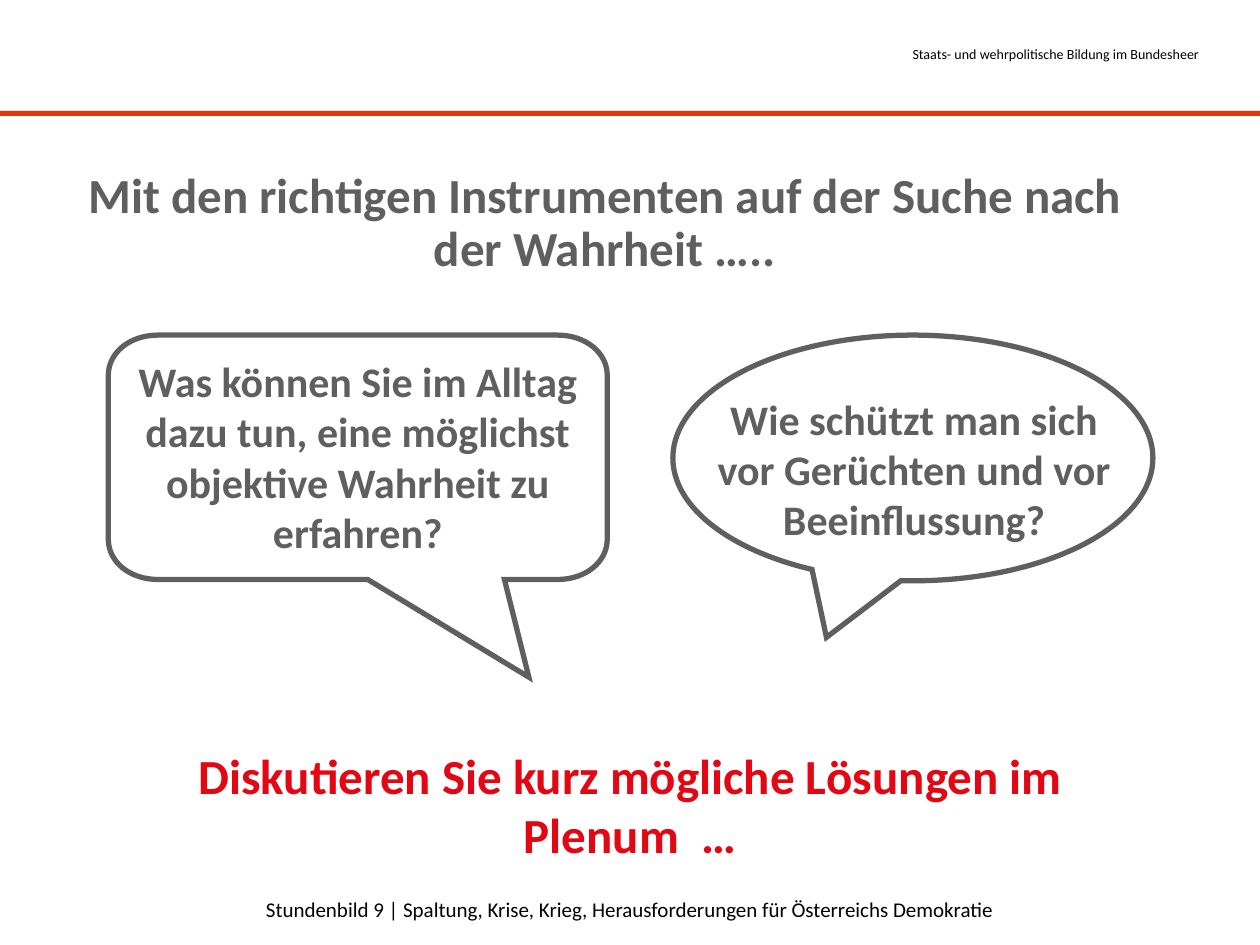
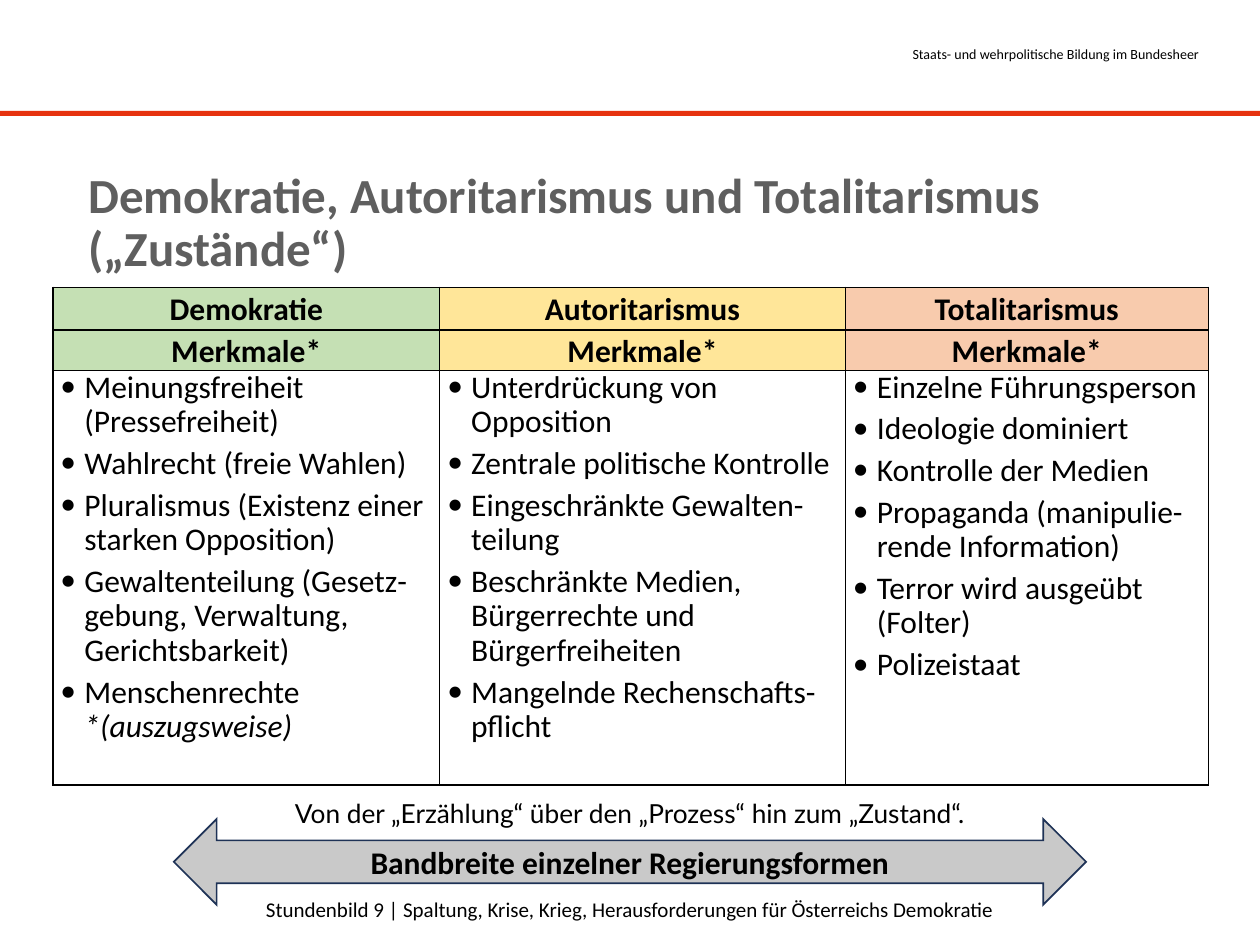
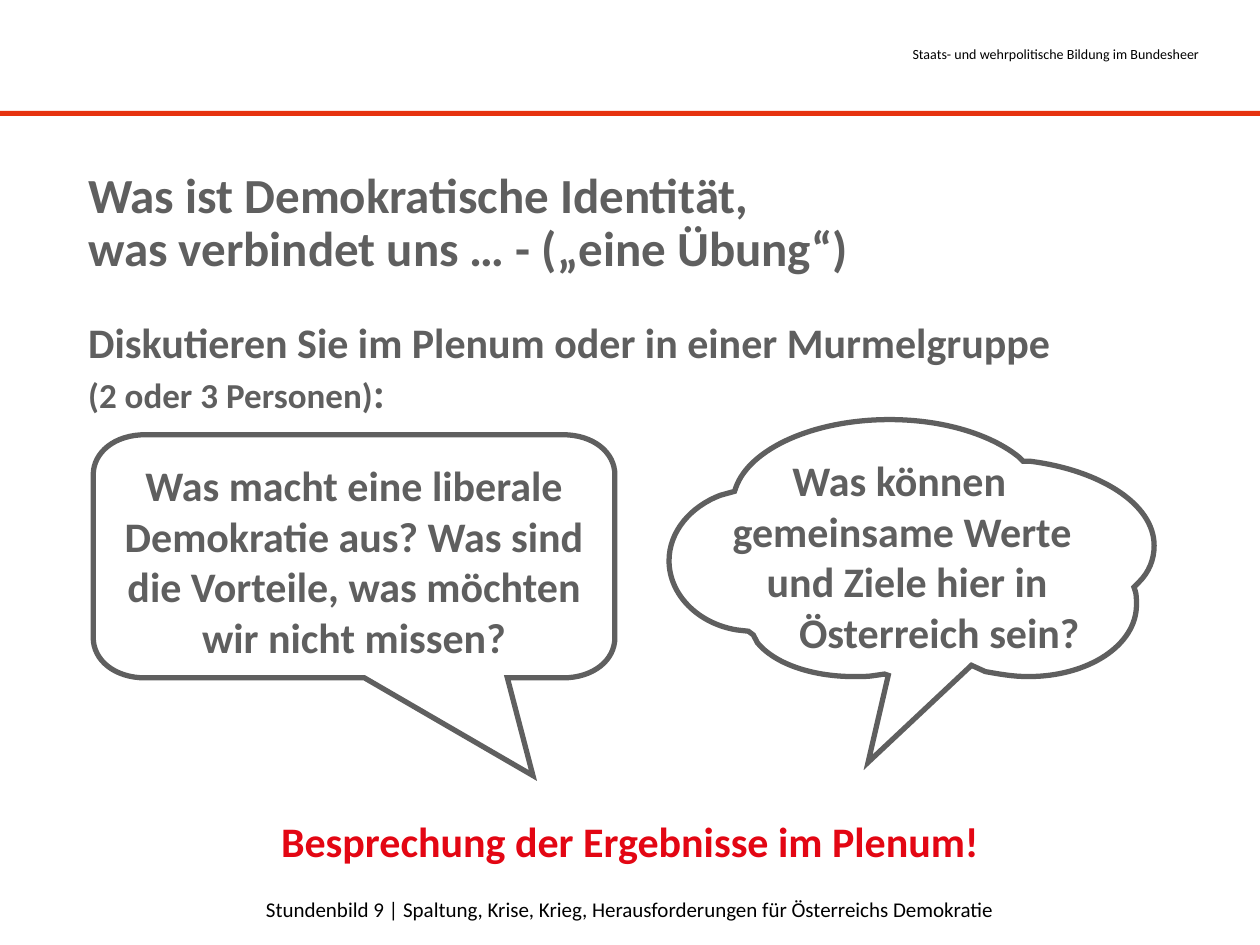
"""Build three lesson slides on democracy and truth."""
from dataclasses import dataclass, field
from typing import Any, Sequence

from lxml import etree
from pptx import Presentation
from pptx.dml.color import RGBColor
from pptx.enum.shapes import MSO_SHAPE
from pptx.enum.text import MSO_ANCHOR, PP_ALIGN
from pptx.oxml.ns import qn
from pptx.util import Inches, Pt

LEFT, MID, RIGHT = PP_ALIGN.LEFT, PP_ALIGN.CENTER, PP_ALIGN.RIGHT
TOP, CENTRE = MSO_ANCHOR.TOP, MSO_ANCHOR.MIDDLE
RECT, ARROW = MSO_SHAPE.RECTANGLE, MSO_SHAPE.LEFT_RIGHT_ARROW
OVAL = MSO_SHAPE.OVAL_CALLOUT

BLACK, WHITE, GREY, RED = "000000", "FFFFFF", "5F5F5F", "E30613"
BAND, SILVER, NAVY = "E6320F", "C9C9C9", "1E3256"
GREEN, YELLOW, PEACH = "C5E0B4", "FFE699", "F8CBAD"

FONT = "Calibri"
NONE = (0, 0, 0, 0)
PAD = (0.1, 0.05, 0.1, 0.05)


@dataclass(frozen=True)
class Run:
    """A stretch of text in one format."""
    text: str
    size: float = 24
    tint: str = GREY
    form: dict[str, Any] = field(default_factory=lambda: {"bold": True})


@dataclass(frozen=True)
class Line:
    """A paragraph with its format and indents."""
    runs: Sequence[Run]
    form: dict[str, Any] = field(default_factory=lambda: {"alignment": MID})
    left: float = 0
    hang: float = 0
    mark: str = ""


@dataclass(frozen=True)
class Box:
    """A place on the slide in inches."""
    left: float
    top: float
    width: float
    height: float

    def spread(self) -> list[int]:
        """Return the four lengths."""
        return [Inches(n) for n in (self.left, self.top, self.width, self.height)]


@dataclass(frozen=True)
class Column:
    """One form of rule in the table."""
    head: str
    tint: str
    width: float
    points: Sequence[str]
    note: str = ""


HEADER, FOOTER = Box(5.52, 0.31, 4.1, 0.24), Box(1.58, 7.07, 6.84, 0.3)
TITLE = Box(0.7, 1.36, 8.48, 0.86)
PLAIN: dict[str, Any] = {"bold": False}

COLUMNS = [
    Column("Demokratie", GREEN, 3.07, [
        "Meinungsfreiheit (Pressefreiheit)",
        "Wahlrecht (freie Wahlen)",
        "Pluralismus (Existenz einer starken Opposition)",
        "Gewaltenteilung (Gesetz-gebung, Verwaltung, Gerichtsbarkeit)",
        "Menschenrechte "], "*(auszugsweise)"),
    Column("Autoritarismus", YELLOW, 3.22, [
        "Unterdrückung von Opposition",
        "Zentrale politische Kontrolle",
        "Eingeschränkte Gewalten-teilung",
        "Beschränkte Medien, Bürgerrechte und Bürgerfreiheiten",
        "Mangelnde Rechenschafts-pflicht"]),
    Column("Totalitarismus", PEACH, 2.88, [
        "Einzelne Führungsperson",
        "Ideologie dominiert",
        "Kontrolle der Medien",
        "Propaganda (manipulie-rende Information)",
        "Terror wird ausgeübt (Folter)",
        "Polizeistaat"]),
]

CLOUD = [
    (7.06, 3.33), (7.49, 3.33, 7.87, 3.45, 8.09, 3.63), (8.12, 3.66),
    (8.17, 3.66), (8.73, 3.73, 9.16, 4, 9.16, 4.33),
    (9.16, 4.44, 9.12, 4.54, 9.04, 4.62), (9, 4.66), (9.01, 4.69),
    (9.02, 4.72, 9.02, 4.76, 9.02, 4.8), (9.02, 5.12, 8.64, 5.37, 8.16, 5.37),
    (8.04, 5.37, 7.93, 5.35, 7.82, 5.33), (7.71, 5.28), (7.7, 5.29),
    (6.89, 6.05), (7.05, 5.36), (7.02, 5.35), (6.95, 5.36),
    (6.9, 5.37, 6.84, 5.37, 6.78, 5.37), (6.43, 5.37, 6.14, 5.26, 6.01, 5.1),
    (5.98, 5.04), (5.94, 5.01), (5.85, 5), (5.54, 4.95, 5.31, 4.72, 5.31, 4.45),
    (5.31, 4.22, 5.48, 4.02, 5.72, 3.93), (5.83, 3.9), (5.84, 3.87),
    (5.95, 3.56, 6.46, 3.33, 7.06, 3.33),
]


def colour(code: str) -> RGBColor:
    """Turn a hex string into a colour."""
    return RGBColor.from_string(code)


def apply(target: Any, form: dict[str, Any]) -> None:
    """Set each format value on the target."""
    for name, value in form.items():
        setattr(target, name, value)


def write(frame: Any, lines: Sequence[Line]) -> None:
    """Fill a text frame with lines."""
    for i, line in enumerate(lines):
        para = frame.paragraphs[0] if i == 0 else frame.add_paragraph()
        apply(para, line.form)
        props = para._p.get_or_add_pPr()
        if line.left:
            props.set("marL", str(Inches(line.left)))
            props.set("indent", str(Inches(line.hang)))
        if line.mark:
            etree.SubElement(props, qn("a:buFont")).set("typeface", FONT)
            etree.SubElement(props, qn("a:buChar")).set("char", line.mark)
        for run in line.runs:
            if run.text == "\n":
                para.add_line_break()
                continue
            part = para.add_run()
            part.text = run.text
            part.font.color.rgb = colour(run.tint)
            apply(part.font, {"name": FONT, "size": Pt(run.size), **run.form})


def margins(inset: Sequence[float]) -> dict[str, Any]:
    """Name the four insets of a frame or cell."""
    names = ("margin_left", "margin_top", "margin_right", "margin_bottom")
    return {name: Inches(n) for name, n in zip(names, inset)}


def fit(frame: Any, lines: Sequence[Line], inset: Sequence[float],
        anchor: Any = TOP) -> None:
    """Set up a text frame and write in it."""
    apply(frame, {"word_wrap": True, "vertical_anchor": anchor, **margins(inset)})
    write(frame, lines)


def label(slide: Any, box: Box, lines: Sequence[Line],
          inset: Sequence[float] = PAD) -> None:
    """Add a text box."""
    fit(slide.shapes.add_textbox(*box.spread()).text_frame, lines, inset)


def style(shape: Any, fill: str = "", edge: str = "", width: float = 3) -> None:
    """Set the fill and edge of a shape, with sharp corners."""
    shape.shadow.inherit = False
    if fill:
        shape.fill.solid()
        shape.fill.fore_color.rgb = colour(fill)
    else:
        shape.fill.background()
    if not edge:
        shape.line.fill.background()
        return
    shape.line.color.rgb = colour(edge)
    shape.line.width = Pt(width)
    rim = shape._element.spPr.find(qn("a:ln"))
    etree.SubElement(rim, qn("a:miter")).set("lim", "800000")


def outline(slide: Any, steps: Sequence[tuple[float, ...]]) -> Any:
    """Draw a closed outline of lines and cubic curves."""
    ends = [(Inches(step[-2]), Inches(step[-1])) for step in steps]
    builder = slide.shapes.build_freeform(*ends[0])
    builder.add_line_segments(ends[1:], close=True)
    shape = builder.convert_to_shape()
    parts = list(shape._element.iter(qn("a:lnTo")))
    for part, step in zip(parts, steps[1:]):
        if len(step) == 2:
            continue
        curve = etree.Element(qn("a:cubicBezTo"))
        for x, y in zip(step[::2], step[1::2]):
            etree.SubElement(curve, qn("a:pt"), x=str(Inches(x) - shape.left),
                             y=str(Inches(y) - shape.top))
        part.getparent().replace(part, curve)
    style(shape, edge=GREY)
    return shape


def bubble(slide: Any, box: Box, text: str, inset: Sequence[float]) -> None:
    """Draw a round speech bubble with its tail below."""
    x, y, r, b = box.left, box.top, box.left + box.width, box.top + box.height
    wide, high, bend_x, bend_y = box.width / 10, 0.32, 0.17, 0.14
    start, tip, end = (x + box.width * n for n in (0.52, 0.843, 0.794))
    shape = outline(slide, [
        (r - wide, y), (x + wide, y),
        (x + bend_x, y, x, y + bend_y, x, y + high), (x, b - high),
        (x, b - bend_y, x + bend_x, b, x + wide, b),
        (start, b), (tip, b + 0.775), (end, b), (r - wide, b),
        (r - bend_x, b, r, b - bend_y, r, b - high), (r, y + high),
        (r, y + bend_y, r - bend_x, y, r - wide, y)])
    fit(shape.text_frame, [Line([Run(text)])], inset)


def title(slide: Any, rows: Sequence[str], align: Any = LEFT,
          box: Box = TITLE) -> None:
    """Add the slide title."""
    form = {"alignment": align, "line_spacing": 0.9}
    label(slide, box, [Line([Run(row, 28)], form) for row in rows], NONE)


def start(deck: Any) -> Any:
    """Add a slide with its footer, header and band."""
    slide = deck.slides.add_slide(deck.slide_layouts[6])
    label(slide, FOOTER, [Line([Run(
        "Stundenbild 9 | Spaltung, Krise, Krieg, Herausforderungen für "
        "Österreichs Demokratie", 12, BLACK, PLAIN)])])
    label(slide, HEADER, [Line([Run(
        "Staats- und wehrpolitische Bildung im Bundesheer", 8, BLACK, PLAIN)],
        {"alignment": RIGHT})])
    style(slide.shapes.add_shape(RECT, *Box(0, 0.88, 10, 0.04).spread()), BAND)
    return slide


def border(cell: Any) -> None:
    """Draw a thin black border on all sides of a cell."""
    props = cell._tc.get_or_add_tcPr()
    for i, side in enumerate(("lnL", "lnR", "lnT", "lnB")):
        rim = etree.Element(qn(f"a:{side}"), w=str(Pt(1)))
        fill = etree.SubElement(rim, qn("a:solidFill"))
        etree.SubElement(fill, qn("a:srgbClr")).set("val", BLACK)
        props.insert(i, rim)


def points(column: Column) -> list[Line]:
    """Turn the points of a column into a bullet list."""
    form = {"line_spacing": 0.9, "space_after": Pt(4)}
    runs = [[Run(text, 18, BLACK, PLAIN)] for text in column.points]
    if column.note:
        runs[-1].append(Run(column.note, 18, BLACK, {"bold": False, "italic": True}))
    return [Line(row, form, 0.19, -0.19, "•") for row in runs]


def grid(slide: Any) -> None:
    """Add the table of the forms of rule."""
    heights = (0.34, 0.31, 3.29)
    box = Box(0.42, 2.28, sum(c.width for c in COLUMNS), sum(heights))
    table = slide.shapes.add_table(3, len(COLUMNS), *box.spread()).table
    apply(table, {"first_row": False, "horz_banding": False})
    for row, height in zip(table.rows, heights):
        row.height = Inches(height)
    form = {"alignment": MID, "line_spacing": 1.07}
    for i, column in enumerate(COLUMNS):
        table.columns[i].width = Inches(column.width)
        heads = [[Line([Run(text, 18, BLACK)], form)]
                 for text in (column.head, "Merkmale*")]
        for j, lines in enumerate([*heads, points(column)]):
            cell = table.cell(j, i)
            apply(cell, {"vertical_anchor": TOP if j else CENTRE,
                         **margins((0.06, 0, 0.06, 0))})
            if j < 2:
                cell.fill.solid()
                cell.fill.fore_color.rgb = colour(column.tint)
            else:
                cell.fill.background()
            border(cell)
            write(cell.text_frame, lines)


def truth(deck: Any) -> None:
    """Build the slide on the search for truth."""
    slide = start(deck)
    title(slide, ["Mit den richtigen Instrumenten auf der Suche nach der Wahrheit ….."],
          MID, Box(0.7, 1.36, 8.2, 0.86))
    bubble(slide, Box(0.86, 2.66, 3.96, 1.94),
           "Was können Sie im Alltag dazu tun, eine möglichst objektive "
           "Wahrheit zu erfahren?", (0.08, 0.16, 0.08, 0.05))
    oval = slide.shapes.add_shape(OVAL, *Box(5.34, 2.66, 3.81, 1.95).spread())
    oval.adjustments[0], oval.adjustments[1] = -0.18, 0.73
    style(oval, WHITE, GREY)
    label(slide, Box(5.59, 3.12, 3.33, 1.21), [Line([Run(
        "Wie schützt man sich vor Gerüchten und vor Beeinflussung?")])], NONE)
    label(slide, Box(1.4, 5.87, 7.2, 1.04), [Line([Run(
        "Diskutieren Sie kurz mögliche Lösungen im Plenum  …", 28, RED)])])


def states(deck: Any) -> None:
    """Build the slide that compares forms of rule."""
    slide = start(deck)
    title(slide, ["Demokratie, Autoritarismus und Totalitarismus", "(„Zustände“)"])
    grid(slide)
    arrow = slide.shapes.add_shape(ARROW, *Box(1.38, 6.5, 7.24, 0.68).spread())
    style(arrow, SILVER, NAVY, 1)
    fit(arrow.text_frame, [Line([Run(
        "Bandbreite einzelner Regierungsformen", 18, BLACK)])], PAD, CENTRE)
    label(slide, Box(1.73, 6.28, 6.54, 0.35), [Line([Run(
        "Von der „Erzählung“ über den „Prozess“ hin zum „Zustand“.",
        15, BLACK, {"name": "Lato"})])])


def bonds(deck: Any) -> None:
    """Build the slide on shared identity."""
    slide = start(deck)
    title(slide, ["Was ist Demokratische Identität,",
                  "was verbindet uns … - („eine Übung“)"])
    label(slide, Box(0.7, 2.51, 8.48, 4.04), [Line([
        Run("Diskutieren Sie im Plenum oder in einer Murmelgruppe"), Run("\n"),
        Run("(2 oder 3 Personen)", 20), Run(":")],
        {"alignment": LEFT, "space_after": Pt(18)})], NONE)
    bubble(slide, Box(0.74, 3.45, 4.14, 1.93),
           "Was macht eine liberale Demokratie aus? Was sind die Vorteile, "
           "was möchten wir nicht missen?", (0.1, 0.2, 0.1, 0.05))
    label(slide, Box(1.99, 6.42, 6.02, 0.5), [Line([Run(
        "Besprechung der Ergebnisse im Plenum!", 24, RED)])])
    label(slide, Box(5.61, 3.61, 3.1, 1.6), [
        Line([Run("Was können")], {"alignment": LEFT}, 0.68),
        Line([Run("gemeinsame Werte")]),
        Line([Run("und Ziele hier in")], left=0.08),
        Line([Run("Österreich sein?")], left=0.59)], NONE)
    outline(slide, CLOUD)


def main() -> None:
    """Build and save the deck."""
    deck = Presentation()
    apply(deck, {"slide_width": Inches(10), "slide_height": Inches(7.5)})
    for build in (truth, states, bonds):
        build(deck)
    deck.save("out.pptx")


if __name__ == "__main__":
    main()
